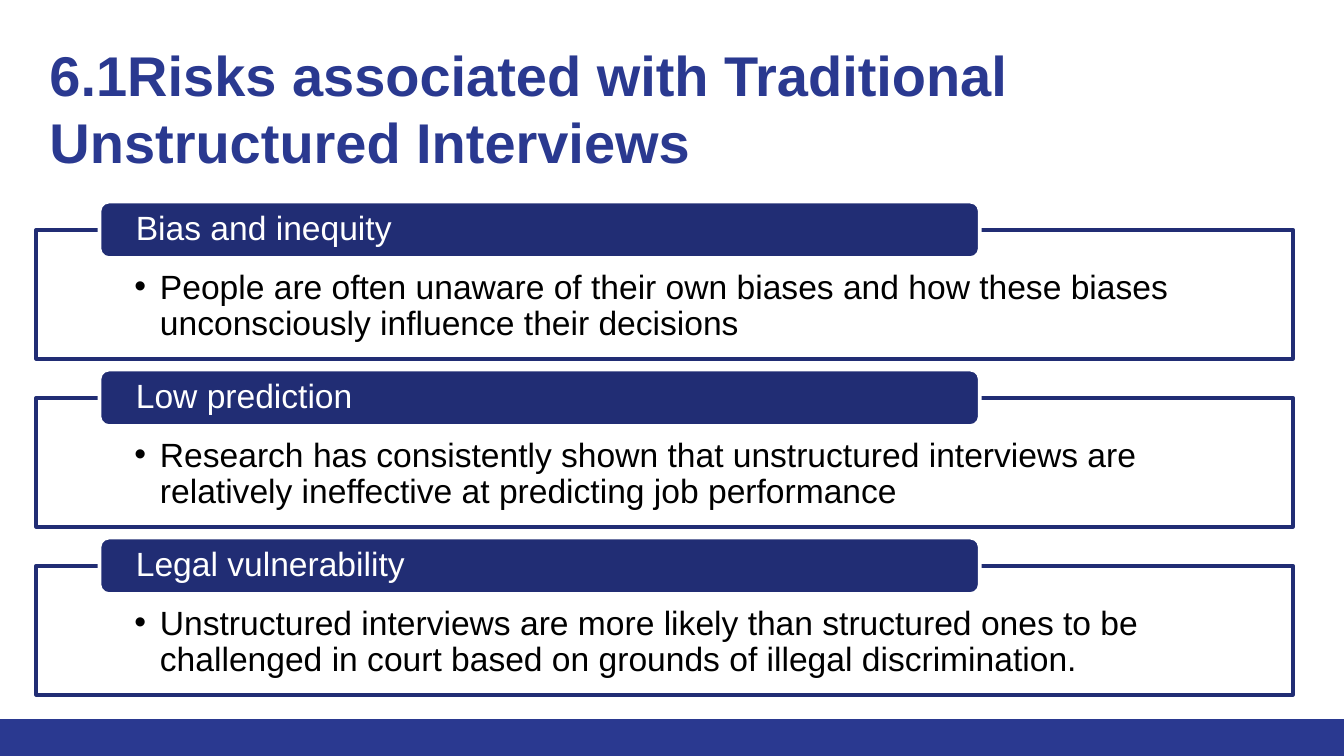
from dataclasses import dataclass

from lxml.etree import SubElement
from pptx import Presentation
from pptx.dml.color import RGBColor as Rgb
from pptx.enum.shapes import MSO_SHAPE as Preset
from pptx.enum.text import MSO_ANCHOR as Anchor, PP_ALIGN as Align
from pptx.oxml.ns import qn
from pptx.util import Inches, Pt

COLUMNS, CELL = 100, 0.1
ROWS = COLUMNS * 9 / 16
FIRST_ROW, ROW_STEP, BAND_ROW = 17.1, 12.5, 53.5
TITLE = "6.1Risks associated with Traditional Unstructured Interviews"
RISKS = (
    ("Bias and inequity",
     "People are often unaware of their own biases and how these biases "
     "unconsciously influence their decisions"),
    ("Low prediction",
     "Research has consistently shown that unstructured interviews are "
     "relatively ineffective at predicting job performance"),
    ("Legal vulnerability",
     "Unstructured interviews are more likely than structured ones to be "
     "challenged in court based on grounds of illegal discrimination."),
)


@dataclass(frozen=True)
class Theme:
    """Colours, font, type sizes and line width of the deck."""
    brand: Rgb = Rgb(0x2A, 0x39, 0x90)
    navy: Rgb = Rgb(0x21, 0x2D, 0x74)
    white: Rgb = Rgb(0xFF, 0xFF, 0xFF)
    black: Rgb = Rgb(0, 0, 0)
    font: str = "Arial"
    title_size: int = 30
    text_size: int = 18
    outline: int = 2


THEME = Theme()


def cells(*counts):
    """Turn grid counts into lengths."""
    return [Inches(count * CELL) for count in counts]


def add_panel(slide, preset, place, fill, line=None):
    """Add a flat filled shape, outlined when a line colour is given."""
    panel = slide.shapes.add_shape(preset, *cells(*place))
    panel.shadow.inherit = False
    panel.fill.solid()
    panel.fill.fore_color.rgb = fill
    if line is None:
        panel.line.fill.background()
    else:
        panel.line.color.rgb = line
        panel.line.width = Pt(THEME.outline)
    return panel


def write(box, text, size, color, insets, anchor=Anchor.TOP, spacing=0.9, bold=False):
    """Write one left-aligned paragraph into a box and return it."""
    frame = box.text_frame
    frame.word_wrap = True
    frame.vertical_anchor = anchor
    (frame.margin_left, frame.margin_top,
     frame.margin_right, frame.margin_bottom) = cells(*insets)
    para = frame.paragraphs[0]
    para.text = text
    para.alignment = Align.LEFT
    para.line_spacing = spacing
    para.font.name = THEME.font
    para.font.size = Pt(size)
    para.font.bold = bold
    para.font.color.rgb = color
    return para


def add_bullet(para, indent):
    """Give a paragraph a round bullet with a hanging indent."""
    properties = para._p.get_or_add_pPr()
    properties.set("marL", str(indent))
    properties.set("indent", str(-indent))
    for tag, key, value in (("a:buFont", "typeface", THEME.font),
                            ("a:buChar", "char", "•")):
        mark = properties.makeelement(qn(tag), {key: value})
        properties.insert_element_before(mark, "a:tabLst", "a:defRPr", "a:extLst")


def set_opacity(shape, percent):
    """Make a solid fill partly transparent."""
    color = shape._element.spPr.find(qn("a:solidFill"))[0]
    SubElement(color, qn("a:alpha")).set("val", str(percent * 1000))


def add_title(slide):
    """Add the slide heading."""
    box = slide.shapes.add_textbox(*cells(2.7, 2, 92, 8.9))
    write(box, TITLE, THEME.title_size, THEME.brand, (1, 1, 1, 1),
          spacing=1, bold=True)


def add_risk(slide, row, heading, detail):
    """Add an outlined detail panel with its heading tab."""
    panel = add_panel(slide, Preset.RECTANGLE, (2.7, row, 93.5, 9.6),
                      THEME.white, THEME.navy)
    set_opacity(panel, 90)
    para = write(panel, detail, THEME.text_size, THEME.black, (7.3, 3, 7.3, 1.4))
    add_bullet(para, *cells(1.9))
    tab = add_panel(slide, Preset.ROUNDED_RECTANGLE, (7.4, row - 2.1, 65.5, 4.2),
                    THEME.navy, THEME.white)
    write(tab, heading, THEME.text_size, THEME.white, (2.5, 0, 2.5, 0), Anchor.MIDDLE)


def main():
    """Build and save the deck."""
    deck = Presentation()
    deck.slide_width, deck.slide_height = cells(COLUMNS, ROWS)
    slide = deck.slides.add_slide(deck.slide_layouts[6])
    add_panel(slide, Preset.RECTANGLE, (0, BAND_ROW, COLUMNS, ROWS - BAND_ROW), THEME.brand)
    add_title(slide)
    for index, (heading, detail) in enumerate(RISKS):
        add_risk(slide, FIRST_ROW + index * ROW_STEP, heading, detail)
    deck.save("out.pptx")


if __name__ == "__main__":
    main()
